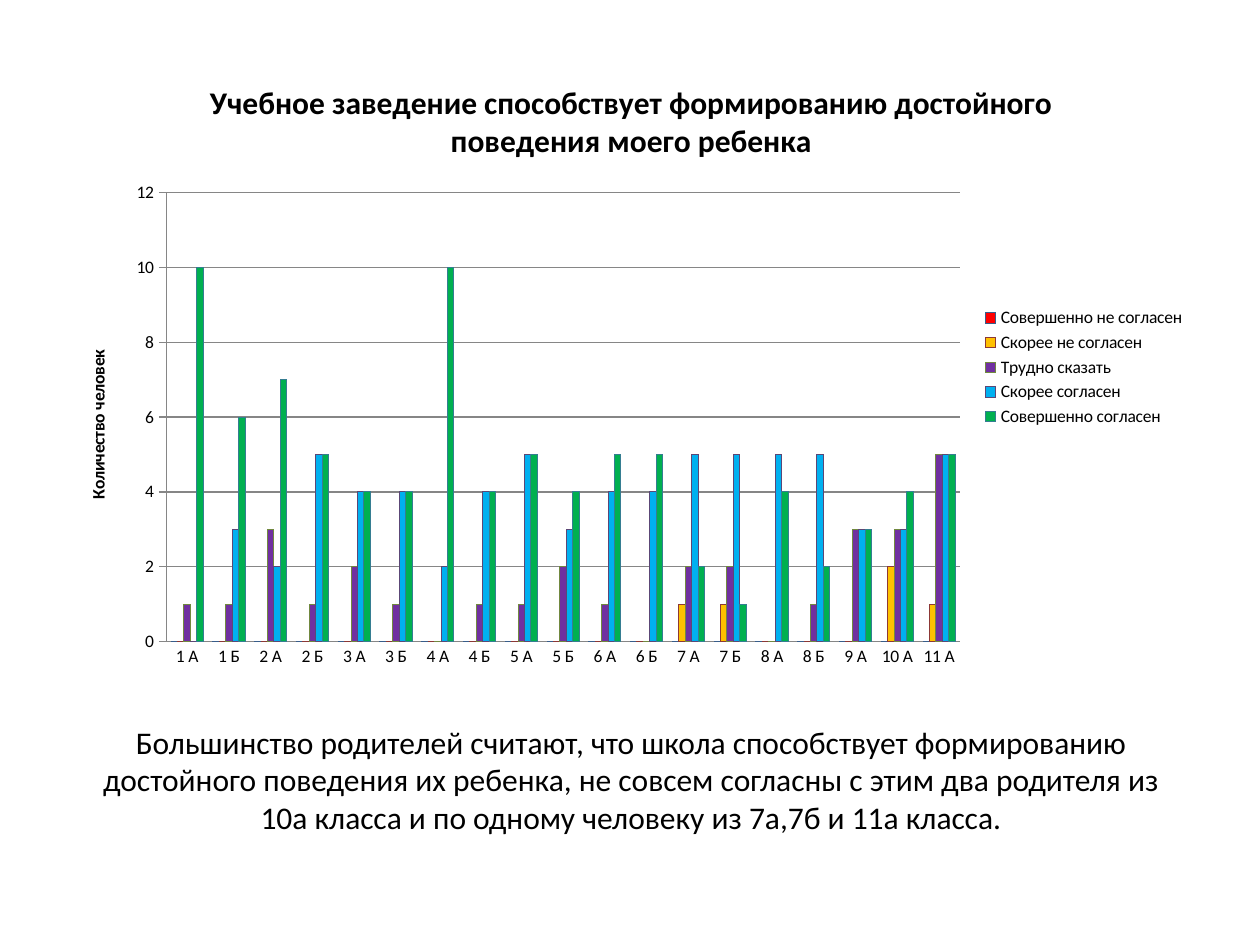
from lxml import etree
from pptx import Presentation
from pptx.chart.data import CategoryChartData
from pptx.dml.color import RGBColor
from pptx.enum import chart as kinds, text
from pptx.oxml import ns
from pptx.util import Inches, Pt

FONT = "Calibri"
COLORS = {"ink": "000000", "grid": "868686"}
CLASSES = ["1 А", "1 Б", "2 А", "2 Б", "3 А", "3 Б", "4 А", "4 Б", "5 А", "5 Б",
           "6 А", "6 Б", "7 А", "7 Б", "8 А", "8 Б", "9 А", "10 А", "11 А"]
# answer, fill, outline, number of parents per class
ANSWERS = [
    ("Совершенно не согласен", "FF0000", "385D8A", [0] * len(CLASSES)),
    ("Скорее не согласен", "FFC000", "8C3836",
     [0, 0, 0, 0, 0, 0, 0, 0, 0, 0, 0, 0, 1, 1, 0, 0, 0, 2, 1]),
    ("Трудно сказать", "7030A0", "71893F",
     [1, 1, 3, 1, 2, 1, 0, 1, 1, 2, 1, 0, 2, 2, 0, 1, 3, 3, 5]),
    ("Скорее согласен", "00B0F0", "5C4776",
     [0, 3, 2, 5, 4, 4, 2, 4, 5, 3, 4, 4, 5, 5, 5, 5, 3, 3, 5]),
    ("Совершенно согласен", "00B050", "357D91",
     [10, 6, 7, 5, 4, 4, 10, 4, 5, 4, 5, 5, 2, 1, 4, 2, 3, 4, 5]),
]


def add_span(para, words, size, bold=False):
    span = para.add_run()
    span.text = words
    span.font.name = FONT
    span.font.size = Pt(size)
    span.font.bold = bold
    span.font.color.rgb = RGBColor.from_string(COLORS["ink"])


deck = Presentation()
deck.slide_width, deck.slide_height = Inches(10), Inches(7.5)
page = deck.slides.add_slide(deck.slide_layouts[6])
left, width = Inches(0.51), Inches(9)

# Chart
data = CategoryChartData()
data.categories = CLASSES
for answer, fill, outline, counts in ANSWERS:
    data.add_series(answer, counts)
chart = page.shapes.add_chart(kinds.XL_CHART_TYPE.COLUMN_CLUSTERED, left, Inches(0.44),
                              width, Inches(4.95), data).chart
chart.font.name = FONT
chart.font.size = Pt(10)
chart.font.color.rgb = RGBColor.from_string(COLORS["ink"])
add_span(chart.chart_title.text_frame.paragraphs[0],
         "Учебное заведение способствует формированию достойного поведения моего ребенка",
         18, True)
chart.chart_title.include_in_layout = False
chart.has_legend = True
chart.legend.position = kinds.XL_LEGEND_POSITION.RIGHT
chart.legend.include_in_layout = False

plot = chart.plots[0]
plot.gap_width = 150
plot.vary_by_categories = False
for series, (answer, fill, outline, counts) in zip(plot.series, ANSWERS):
    series.format.fill.solid()
    series.format.fill.fore_color.rgb = RGBColor.from_string(fill)
    series.format.line.color.rgb = RGBColor.from_string(outline)

# Axes
counts_axis, class_axis = chart.value_axis, chart.category_axis
counts_axis.minimum_scale, counts_axis.maximum_scale, counts_axis.major_unit = 0, 12, 2
counts_axis.major_tick_mark = kinds.XL_TICK_MARK.OUTSIDE
class_axis.major_tick_mark = kinds.XL_TICK_MARK.NONE
add_span(counts_axis.axis_title.text_frame.paragraphs[0], "Количество человек", 10, True)
for ruled in (counts_axis, class_axis, counts_axis.major_gridlines):
    ruled.format.line.color.rgb = RGBColor.from_string(COLORS["grid"])
    ruled.format.line.width = Pt(0.75)

# Inner plot area, as shares of the chart
area = plot._element.getparent()
for old in area.findall(ns.qn("c:layout")):
    area.remove(old)
layout = etree.Element(ns.qn("c:layout"))
manual = etree.SubElement(layout, ns.qn("c:manualLayout"))
for tag, value in (("layoutTarget", "inner"), ("xMode", "edge"), ("yMode", "edge"),
                   ("x", "0.09"), ("y", "0.22"), ("w", "0.7"), ("h", "0.72")):
    etree.SubElement(manual, ns.qn("c:" + tag)).set("val", value)
area.insert(0, layout)

# Conclusion
box = page.shapes.add_textbox(left, Inches(5.56), width, Inches(1.25))
frame = box.text_frame
frame.word_wrap = True
frame.vertical_anchor = text.MSO_ANCHOR.MIDDLE
para = frame.paragraphs[0]
para.alignment = text.PP_ALIGN.CENTER
add_span(para, "Большинство родителей считают, что школа способствует формированию "
               "достойного поведения их ребенка, не совсем согласны с этим два родителя из "
               "10а класса и по одному человеку из 7а,7б и 11а класса.", 18)

deck.save("out.pptx")
